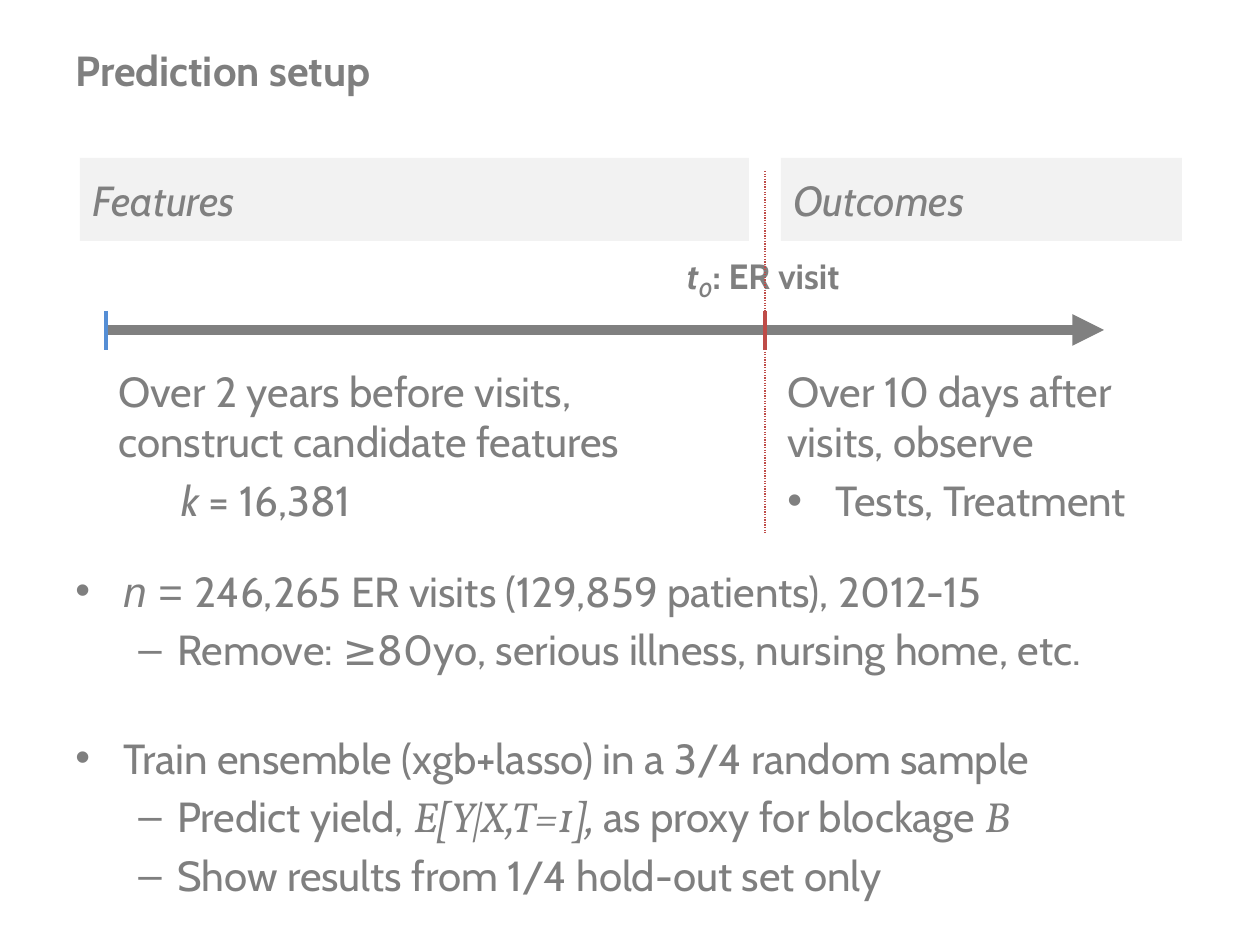
import pptx
import pptx.dml.color
import pptx.enum.dml
import pptx.enum.shapes
import pptx.enum.text
import pptx.oxml
import pptx.oxml.ns
import pptx.util

RGBColor = pptx.dml.color.RGBColor
GREY = RGBColor(0x7F, 0x7F, 0x7F)
AXIS_GREY = RGBColor(0x80, 0x80, 0x80)
PANEL = RGBColor(0xF2, 0xF2, 0xF2)
RED = RGBColor(0xBF, 0x4C, 0x48)
BLUE = RGBColor(0x55, 0x8E, 0xD5)

ANCHOR = pptx.enum.text.MSO_ANCHOR
ALIGN = pptx.enum.text.PP_ALIGN
ITALIC = {"italic": True}
MATH = {"name": "Vollkorn", "italic": True}
SYMBOL = {"name": "Arial"}


def px(count):
    return pptx.util.Emu(round(count * 914400 / 126))


def set_all(target, values):
    for name, value in values.items():
        setattr(target, name, value)


def add_child(parent, tag, **attributes):
    child = pptx.oxml.parse_xml(f"<{tag} {pptx.oxml.ns.nsdecls('a')}/>")
    for name, value in attributes.items():
        child.set(name, value)
    parent.append(child)


def item(*spans, bullet=None, margin=0, hanging=0, before=4.8):
    """Describe a paragraph; each span is a string or (string, font values)."""
    return {"spans": spans, "bullet": bullet, "margin": margin,
            "hanging": hanging, "before": before}


def bullet(*spans, before=4.8):
    return item(*spans, bullet="•", margin=48, hanging=48, before=before)


def dash(*spans):
    return item(*spans, bullet="–", margin=102, hanging=39)


class SlideWriter:
    def __init__(self, page, font="Cabin", size=24):
        self.page = page
        self.font = {"name": font, "size": pptx.util.Pt(size), "bold": False, "italic": False}

    def fill_text(self, frame, items, color=GREY, align=ALIGN.LEFT, **style):
        for index, entry in enumerate(items):
            para = frame.add_paragraph() if index else frame.paragraphs[0]
            set_all(para, {"alignment": align,
                           "space_before": pptx.util.Pt(entry["before"])})
            properties = para._p.get_or_add_pPr()
            properties.set("marL", str(px(entry["margin"])))
            properties.set("indent", str(-px(entry["hanging"])))
            if entry["bullet"]:
                add_child(properties, "a:buFont", typeface="Arial")
                add_child(properties, "a:buChar", char=entry["bullet"])
            for part in entry["spans"]:
                text, values = (part, {}) if isinstance(part, str) else part
                values = {**self.font, **style, **values}
                baseline = values.pop("baseline", None)
                span = para.add_run()
                span.text = text
                set_all(span.font, values)
                span.font.color.rgb = color
                if baseline:
                    span._r.get_or_add_rPr().set("baseline", str(baseline))

    def text(self, place, items, wrap=True, anchor=ANCHOR.TOP, **style):
        frame = self.page.shapes.add_textbox(*map(px, place)).text_frame
        set_all(frame, {"word_wrap": wrap, "vertical_anchor": anchor})
        self.fill_text(frame, items, **style)

    def panel(self, place, label):
        shape = self.page.shapes.add_shape(
            pptx.enum.shapes.MSO_SHAPE.RECTANGLE, *map(px, place))
        shape.shadow.inherit = False
        shape.fill.solid()
        shape.fill.fore_color.rgb = PANEL
        shape.line.fill.background()
        shape.text_frame.vertical_anchor = ANCHOR.MIDDLE
        self.fill_text(shape.text_frame, [item(label)], color=AXIS_GREY, italic=True)

    def line(self, start, end, color, width, dotted=False, arrow=False):
        connector = self.page.shapes.add_connector(
            pptx.enum.shapes.MSO_CONNECTOR.STRAIGHT, *map(px, start + end))
        connector.line.color.rgb = color
        connector.line.width = pptx.util.Pt(width)
        if dotted:
            connector.line.dash_style = pptx.enum.dml.MSO_LINE.ROUND_DOT
        if arrow:
            add_child(connector.line._get_or_add_ln(), "a:tailEnd", type="triangle")
        add_child(connector._element.spPr, "a:effectLst")


def main():
    deck = pptx.Presentation()
    set_all(deck, {"slide_width": px(1260), "slide_height": px(945)})
    writer = SlideWriter(deck.slides.add_slide(deck.slide_layouts[6]))

    start_x, visit_x, end_x, axis_y = 106, 765, 1104, 330
    tick_top, tick_bottom = axis_y - 19, axis_y + 20

    writer.text((63, 38, 1134, 63), [item("Prediction setup", before=0)],
                anchor=ANCHOR.MIDDLE, bold=True)
    writer.text((start_x, 359, 650, 262), [
        item("Over 2 years before visits, construct candidate features"),
        item(("k", ITALIC), " = 16,381", margin=63)])

    writer.line((start_x, axis_y), (end_x, axis_y), AXIS_GREY, 6, arrow=True)
    for x, color in ((visit_x, RED), (start_x, BLUE)):
        writer.line((x, tick_top), (x, tick_bottom), color, 2.25)
    writer.text((673, 248, 188, 55), [
        item(("t", ITALIC), ("0", {"italic": True, "baseline": -25000}),
             ": ER visit ", before=0)],
        wrap=False, align=ALIGN.CENTER, bold=True, size=pptx.util.Pt(20))

    writer.text((775, 359, 406, 258), [
        item("Over 10 days after visits, observe"),
        bullet("Tests, Treatment")], color=AXIS_GREY)
    writer.line((visit_x, 171), (visit_x, 534), RED, 0.75, dotted=True)

    for left, width, label in ((80, 669, "Features"), (781, 401, "Outcomes")):
        writer.panel((left, 158, width, 83), label)

    writer.text((63, 559, 1134, 149), [
        bullet(("n", {**SYMBOL, **ITALIC}), (" = ", SYMBOL),
               "246,265 ER visits (129,859 patients), 2012-15"),
        dash("Remove: ≥80yo, serious illness, nursing home, etc."),
        bullet("Train ensemble (xgb+lasso) in a 3/4 random sample", before=33),
        dash("Predict yield, ", ("E[Y|X,T=1],", MATH),
             " as proxy for blockage ", ("B", MATH)),
        dash("Show results from 1/4 hold-out set only")])

    deck.save("out.pptx")


if __name__ == "__main__":
    main()
